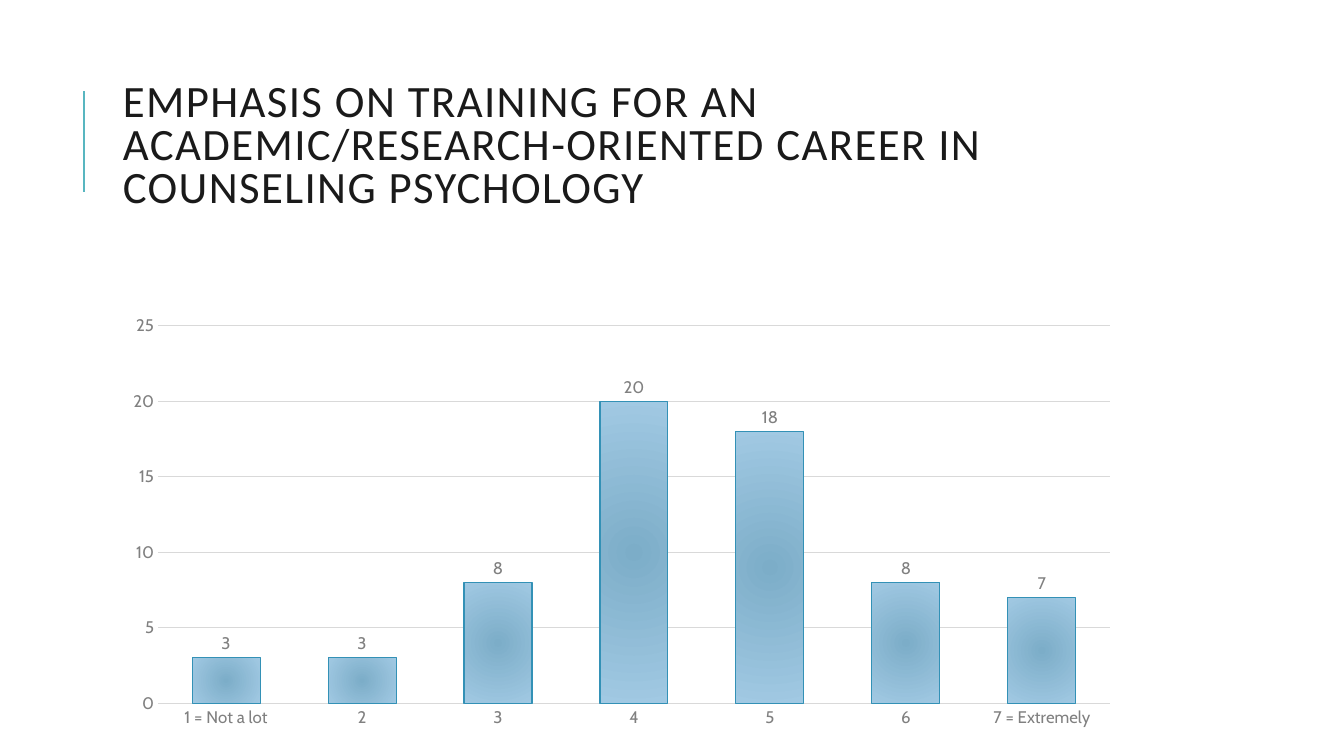
import lxml.etree
import pptx
import pptx.chart.data
import pptx.dml.color
import pptx.enum.chart
import pptx.enum.shapes
import pptx.enum.text
import pptx.oxml
import pptx.oxml.ns
import pptx.util

Inches, Pt = pptx.util.Inches, pptx.util.Pt
COLORS = {
    "accent": "58B6C0", "title": "1A1A1A", "label": "808080", "grid": "D9D9D9",
    "bar center": "7CADC8", "bar edge": "A1C9E3", "bar line": "3391B6",
}
RATINGS = {"1 = Not a lot": 3, "2": 3, "3": 8, "4": 20, "5": 18, "6": 8, "7 = Extremely": 7}


def rgb(name):
    return pptx.dml.color.RGBColor.from_string(COLORS[name])


def style_labels(font):
    font.name, font.size, font.bold = "Cabin", Pt(12), False
    font.color.rgb = rgb("label")


presentation = pptx.Presentation()
presentation.slide_width, presentation.slide_height = Inches(13.33), Inches(7.5)
slide = presentation.slides.add_slide(presentation.slide_layouts[6])

# Accent line beside the title
accent = slide.shapes.add_connector(
    pptx.enum.shapes.MSO_CONNECTOR.STRAIGHT, Inches(0.83), Inches(1.9), Inches(0.83), Inches(0.9))
accent.line.color.rgb = rgb("accent")
accent.line.width = Pt(1.5)
lxml.etree.SubElement(accent._element.spPr, pptx.oxml.ns.qn("a:effectLst"))

# Title
title = slide.shapes.add_textbox(Inches(1.12), Inches(0.64), Inches(10.63), Inches(1.64))
title.text_frame.word_wrap = True
title.text_frame.vertical_anchor = pptx.enum.text.MSO_ANCHOR.MIDDLE
heading = title.text_frame.paragraphs[0]
heading.line_spacing = 0.8
heading.font.name, heading.font.size = "Calibri", Pt(32)
heading.font.color.rgb = rgb("title")
heading_run = heading.add_run()
heading_run.text = ("EMPHASIS ON TRAINING FOR AN ACADEMIC/RESEARCH-ORIENTED CAREER "
                    "IN COUNSELING PSYCHOLOGY")
heading_run._r.get_or_add_rPr().set("spc", "100")

# Chart of ratings
rating_data = pptx.chart.data.CategoryChartData()
rating_data.categories = list(RATINGS)
rating_data.add_series("Series 1", list(RATINGS.values()))
chart = slide.shapes.add_chart(
    pptx.enum.chart.XL_CHART_TYPE.COLUMN_CLUSTERED,
    Inches(1.12), Inches(3.05), Inches(10.09), Inches(4.25), rating_data).chart
chart.has_legend = False
chart.has_title = False
chart.font.name, chart.font.size = "Cabin", Pt(10)

# Axes and gridlines
for axis in (chart.category_axis, chart.value_axis):
    axis.major_tick_mark = axis.minor_tick_mark = pptx.enum.chart.XL_TICK_MARK.NONE
    style_labels(axis.tick_labels.font)
counts = chart.value_axis
counts.minimum_scale, counts.maximum_scale, counts.major_unit = 0, 25, 5
counts.format.line.fill.background()
counts.has_major_gridlines = True
for line in (chart.category_axis.format.line, counts.major_gridlines.format.line):
    line.color.rgb = rgb("grid")
    line.width = Pt(0.75)

# Bars and their values
plot = chart.plots[0]
plot.vary_by_categories = False
plot.gap_width, plot.overlap = 100, -24
plot.has_data_labels = True
values = plot.data_labels
values.show_value = True
values.position = pptx.enum.chart.XL_LABEL_POSITION.OUTSIDE_END
style_labels(values.font)
bars = plot.series[0]
bars.format.line.color.rgb = rgb("bar line")
bars.format.line.width = Pt(0.75)

# Radial gradient, darker in the middle of each bar
gradient = pptx.oxml.parse_xml(
    f'<a:gradFill {pptx.oxml.ns.nsdecls("a")} rotWithShape="1"><a:gsLst>'
    f'<a:gs pos="0"><a:srgbClr val="{COLORS["bar center"]}"/></a:gs>'
    f'<a:gs pos="100000"><a:srgbClr val="{COLORS["bar edge"]}"/></a:gs></a:gsLst>'
    '<a:path path="circle"><a:fillToRect l="100000" t="100000" r="100000" b="100000"/></a:path>'
    '</a:gradFill>')
bars._element.spPr.insert(0, gradient)

presentation.save("out.pptx")
